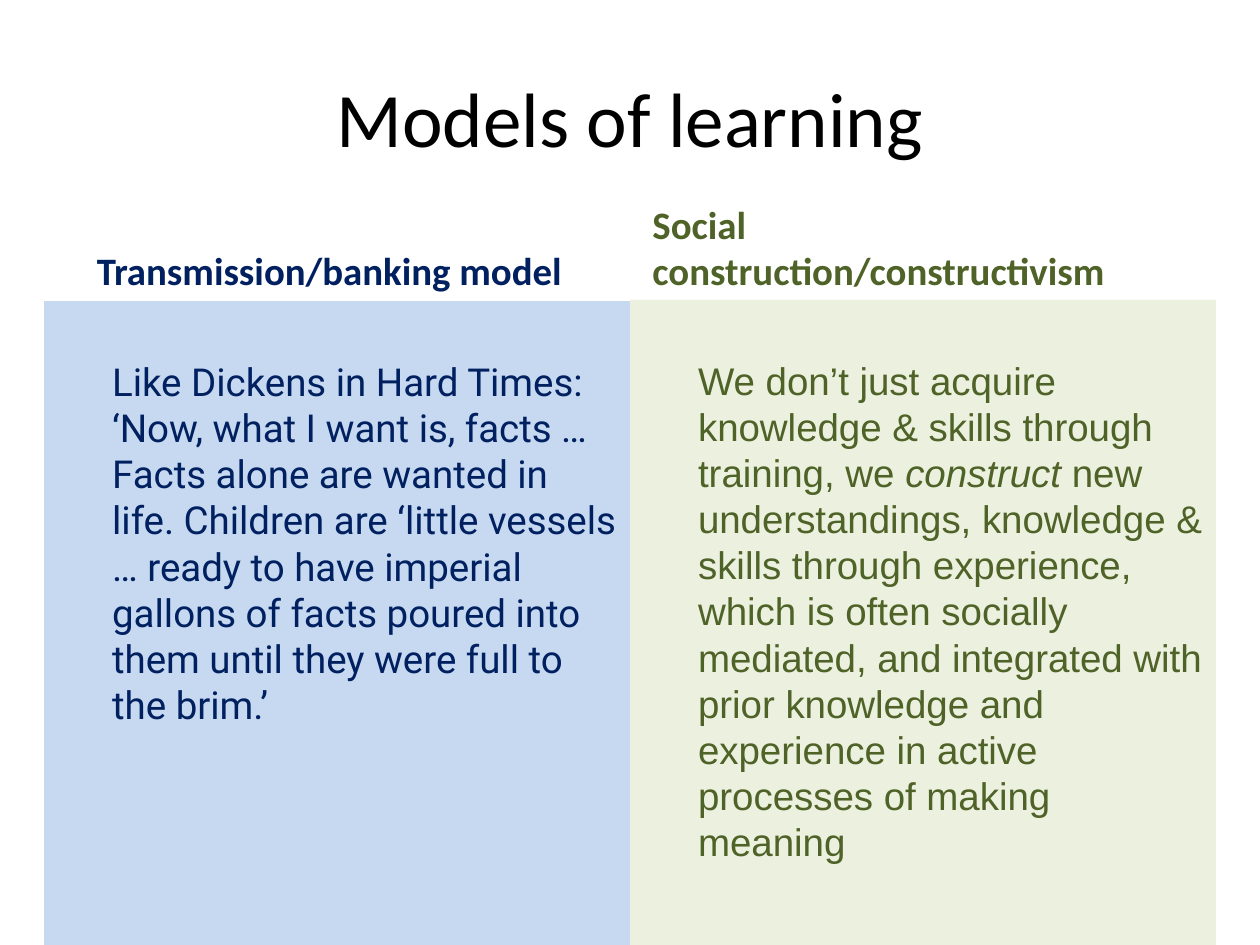
from dataclasses import dataclass

from pptx import Presentation
from pptx.dml.color import RGBColor
from pptx.enum.shapes import MSO_SHAPE
from pptx.enum.text import MSO_ANCHOR, PP_ALIGN
from pptx.util import Inches, Pt

# Content: each body is a list of (text, italic) spans
TITLE = "Models of learning"
COLUMNS = [
    {
        "heading": "Transmission/banking model",
        "body": [
            ("Like Dickens in Hard Times: ‘Now, what I want is, facts … "
             "Facts alone are wanted in life. Children are ‘little vessels … "
             "ready to have imperial gallons of facts poured into them until "
             "they were full to the brim.’", False),
        ],
        "font": "Roboto", "color": "002060", "fill": "C6D9F1",
        "heading_box": (0.67, 1.68, 4.25, 0.7),
        "panel_top": 2.39,
    },
    {
        "heading": "Social construction/constructivism",
        "body": [
            ("We don’t just acquire knowledge & skills through training, we ", False),
            ("construct", True),
            (" new understandings, knowledge & skills through experience, "
             "which is often socially mediated, and integrated with prior "
             "knowledge and experience in active processes of making meaning", False),
        ],
        "font": "Arial", "color": "4F6228", "fill": "EBF1DE",
        "heading_box": (5.08, 1.68, 4.42, 0.7),
        "panel_top": 2.38,
    },
]


@dataclass(frozen=True)
class Theme:
    font: str = "Calibri"
    title_color: str = "000000"
    title_size: float = 44
    heading_size: float = 22.2
    body_size: float = 22
    body_line: float = 26.4


THEME = Theme()
PANEL_LEFT, PANEL_WIDTH, PANEL_HEIGHT = 0.35, 4.65, 5.15


def write_text(shape, spans, *, font, size, color, bold=False,
               align=PP_ALIGN.LEFT, anchor=MSO_ANCHOR.TOP,
               left=0.1, top=0.05, line=None):
    """Fill a shape with one paragraph of (text, italic) spans."""
    frame = shape.text_frame
    frame.word_wrap = True
    frame.vertical_anchor = anchor
    frame.margin_left, frame.margin_right = Inches(left), Inches(0.1)
    frame.margin_top, frame.margin_bottom = Inches(top), Inches(0.05)
    para = frame.paragraphs[0]
    para.alignment = align
    if line:
        para.line_spacing = Pt(line)
    for text, italic in spans:
        span = para.add_run()
        span.text = text
        span.font.name = font
        span.font.size = Pt(size)
        span.font.bold = bold
        span.font.italic = italic
        span.font.color.rgb = RGBColor.from_string(color)


def add_column(page, index, column):
    # Panel with its body text
    panel = page.shapes.add_shape(
        MSO_SHAPE.RECTANGLE,
        Inches(PANEL_LEFT + index * PANEL_WIDTH), Inches(column["panel_top"]),
        Inches(PANEL_WIDTH), Inches(PANEL_HEIGHT))
    panel.shadow.inherit = False
    panel.fill.solid()
    panel.fill.fore_color.rgb = RGBColor.from_string(column["fill"])
    panel.line.fill.background()
    write_text(panel, column["body"], font=column["font"],
               size=THEME.body_size, color=column["color"],
               left=0.54, top=0.45, line=THEME.body_line)

    # Heading above the panel
    heading = page.shapes.add_textbox(*map(Inches, column["heading_box"]))
    write_text(heading, [(column["heading"], False)], font=THEME.font,
               size=THEME.heading_size, color=column["color"], bold=True,
               anchor=MSO_ANCHOR.BOTTOM)


def main():
    deck = Presentation()
    deck.slide_width, deck.slide_height = Inches(10), Inches(7.5)
    page = deck.slides.add_slide(deck.slide_layouts[5])

    # Title
    title = page.shapes.title
    title.left, title.top = Inches(0.5), Inches(0.3)
    title.width, title.height = Inches(9), Inches(1.25)
    write_text(title, [(TITLE, False)], font=THEME.font,
               size=THEME.title_size, color=THEME.title_color,
               align=PP_ALIGN.CENTER, anchor=MSO_ANCHOR.MIDDLE)

    # The two models side by side
    for index, column in enumerate(COLUMNS):
        add_column(page, index, column)

    deck.save("out.pptx")


if __name__ == "__main__":
    main()
